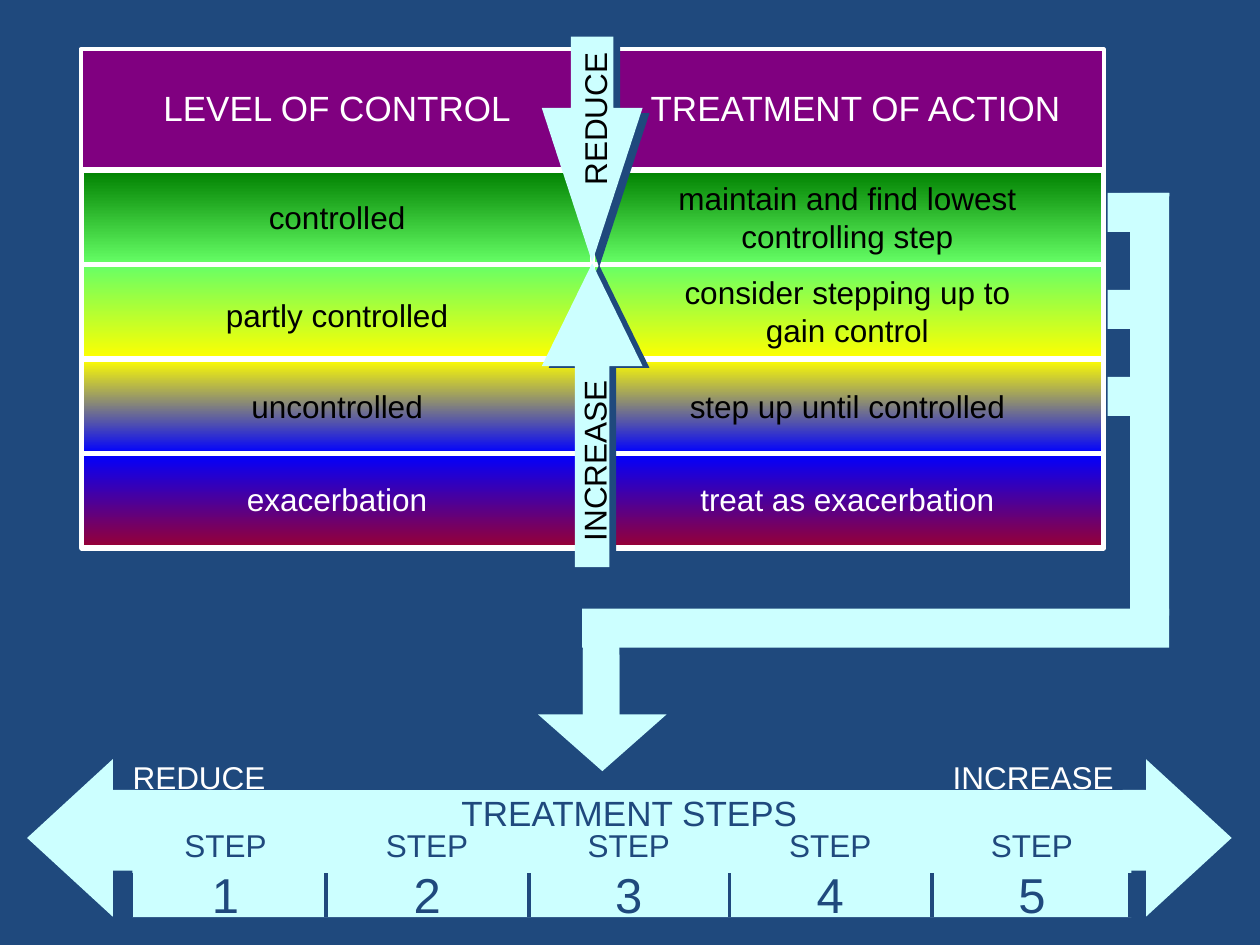
"""Build a slide linking levels of control to treatment steps."""
import dataclasses

import lxml.etree
import pptx
import pptx.dml.color
import pptx.enum.shapes
import pptx.enum.text
import pptx.oxml.ns
import pptx.util

Inches = pptx.util.Inches
Pt = pptx.util.Pt
Shape = pptx.enum.shapes.MSO_SHAPE
Align = pptx.enum.text.PP_ALIGN


@dataclasses.dataclass(frozen=True)
class Theme:
    font: str = "Arial"
    navy: str = "1F497D"
    ice: str = "CCFFFF"
    purple: str = "800080"
    white: str = "FFFFFF"
    black: str = "000000"
    spectrum: tuple = ("008000", "66FF66", "FFFF00", "0000FF", "990033")
    body: int = 18
    heading: int = 20
    number: int = 28


def rgb(color):
    return pptx.dml.color.RGBColor.from_string(color)


class SlideBuilder:
    def __init__(self, slide, theme):
        self.slide = slide
        self.theme = theme
        slide.background.fill.solid()
        slide.background.fill.fore_color.rgb = rgb(theme.navy)

    def panel(self, box, colors, line_width):
        shape = self.block(box, color=colors[0])
        if len(colors) == 2:
            shape.fill.gradient()
            shape.fill.gradient_angle = 270
            for stop, color in zip(shape.fill.gradient_stops, colors):
                stop.color.rgb = rgb(color)
        shape.line.color.rgb = rgb(self.theme.white)
        shape.line.width = Pt(line_width)

    def block(self, box, kind=Shape.RECTANGLE, color=None, rotation=0, adjustments=(), shadow=None):
        shape = self.slide.shapes.add_shape(kind, *map(Inches, box))
        shape.shadow.inherit = False
        shape.rotation = rotation
        shape.fill.solid()
        shape.fill.fore_color.rgb = rgb(color or self.theme.ice)
        shape.line.fill.background()
        for index, value in enumerate(adjustments):
            shape.adjustments[index] = value
        if shadow:
            self.cast_shadow(shape, *shadow)
        return shape

    def cast_shadow(self, shape, distance, angle):
        qualified = pptx.oxml.ns.qn
        effects = shape.element.spPr.find(qualified("a:effectLst"))
        outer = lxml.etree.SubElement(
            effects, qualified("a:outerShdw"), dist=str(int(Pt(distance))),
            dir=str(angle * 60000), algn="ctr", rotWithShape="0")
        lxml.etree.SubElement(outer, qualified("a:srgbClr"), val=self.theme.navy)

    def text(self, box, lines, color, sizes=None, rotation=0):
        shape = self.slide.shapes.add_textbox(*map(Inches, box))
        shape.rotation = rotation
        frame = shape.text_frame
        frame.word_wrap = not rotation
        frame.auto_size = pptx.enum.text.MSO_AUTO_SIZE.SHAPE_TO_FIT_TEXT
        frame.text = "\n".join(lines)
        for paragraph, size in zip(frame.paragraphs, sizes or [self.theme.body]):
            paragraph.alignment = Align.LEFT if rotation else Align.CENTER
            paragraph.font.name = self.theme.font
            paragraph.font.size = Pt(size)
            paragraph.font.color.rgb = rgb(color)

    def divider(self, x, top, bottom):
        line = self.slide.shapes.add_connector(
            pptx.enum.shapes.MSO_CONNECTOR.STRAIGHT,
            Inches(x), Inches(top), Inches(x), Inches(bottom))
        line.line.color.rgb = rgb(self.theme.navy)
        line.line.width = Pt(2.25)
        lxml.etree.SubElement(line.element.spPr, pptx.oxml.ns.qn("a:effectLst"))


def draw_control_table(builder):
    theme = builder.theme
    columns = [
        (0.64, 0.65, (0.65, 0.64, 4.05, 0.43), "LEVEL OF CONTROL", [
            ("controlled", (0.65, 1.52, 4.05, 0.4)),
            ("partly controlled", (0.65, 2.3, 4.05, 0.4)),
            ("uncontrolled", (0.65, 3.02, 4.05, 0.4)),
            ("exacerbation", (0.65, 3.76, 4.05, 0.4))]),
        (4.7, 4.7, (4.73, 0.64, 4.12, 0.43), "TREATMENT OF ACTION", [
            ("maintain and find lowest controlling step", (4.7, 1.37, 4.05, 0.7)),
            ("consider stepping up to gain control", (5.17, 2.12, 3.11, 0.7)),
            ("step up until controlled", (4.7, 3.02, 4.05, 0.4)),
            ("treat as exacerbation", (4.7, 3.76, 4.05, 0.4))])]
    text_colors = [theme.black] * 3 + [theme.white]
    for header_left, left, heading_box, heading, rows in columns:
        builder.panel((header_left, 0.39, 4.06, 0.96), [theme.purple], 2.25)
        for index in range(len(rows)):
            builder.panel((left, 1.35 + 0.75 * index, 4.06, 0.75),
                          theme.spectrum[index:index + 2], 3)
        for (label, box), color in zip(rows, text_colors):
            builder.text(box, [label], color)
        builder.text(heading_box, [heading], theme.white, [theme.heading])


def draw_treatment_steps(builder):
    theme = builder.theme
    for left, rotation in ((-0.07, 270), (8.81, 90)):
        builder.block((left, 6.31, 1.25, 0.68), Shape.ISOSCELES_TRIANGLE, rotation=rotation)
    builder.block((1.05, 6.27, 7.93, 1.01))
    for left in (0.86, 8.91):
        builder.block((left, 6.27, 0.24, 0.64))
    for x in (1.04, 2.59, 4.2, 5.79, 7.4, 8.97):
        builder.divider(x, 6.93, 7.28)
    builder.text((2.97, 6.23, 4.05, 0.43), ["TREATMENT STEPS"], theme.navy, [theme.heading])
    for left, label in ((0.51, "REDUCE"), (7.13, "INCREASE")):
        builder.text((left, 5.97, 2.14, 0.4), [label], theme.white)
    for index in range(5):
        builder.text((0.72 + 1.6 * index, 6.51, 2.14, 0.87), ["STEP", str(index + 1)],
                     theme.navy, [theme.body, theme.number])


def draw_action_path(builder):
    builder.block((4.48, 5.3, 0.58, 0.29), rotation=270, shadow=(4.5, 27))
    for top in (1.53, 2.3, 2.99):
        builder.block((8.79, top, 0.49, 0.31), shadow=(4, 90))
    builder.block((7.32, 3.18, 3.61, 0.31), rotation=270, shadow=(4.5, 27))
    builder.block((4.62, 4.83, 4.66, 0.31), shadow=(4.5, 63))
    builder.block((4.27, 5.67, 1.02, 0.45), Shape.ISOSCELES_TRIANGLE,
                  rotation=180, shadow=(3.6, 56))
    builder.block((4.48, 5.24, 0.58, 0.29), rotation=270)


def draw_center_arrows(builder):
    black = builder.theme.black
    builder.block((4.3, 0.29, 0.8, 1.79), Shape.DOWN_ARROW,
                  adjustments=(0.42, 1.53), shadow=(5, 37))
    builder.text((4.09, 0.74, 1.26, 0.4), ["REDUCE"], black, rotation=270)
    builder.block((4.3, 2.09, 0.8, 2.41), Shape.UP_ARROW,
                  adjustments=(0.34, 1.02), shadow=(4.1, 14))
    builder.text((3.97, 3.45, 1.49, 0.4), ["INCREASE"], black, rotation=270)


def main():
    presentation = pptx.Presentation()
    presentation.slide_width = Inches(10)
    presentation.slide_height = Inches(7.5)
    slide = presentation.slides.add_slide(presentation.slide_layouts[6])
    builder = SlideBuilder(slide, Theme())
    draw_control_table(builder)
    draw_treatment_steps(builder)
    draw_action_path(builder)
    draw_center_arrows(builder)
    presentation.save("out.pptx")


if __name__ == "__main__":
    main()
